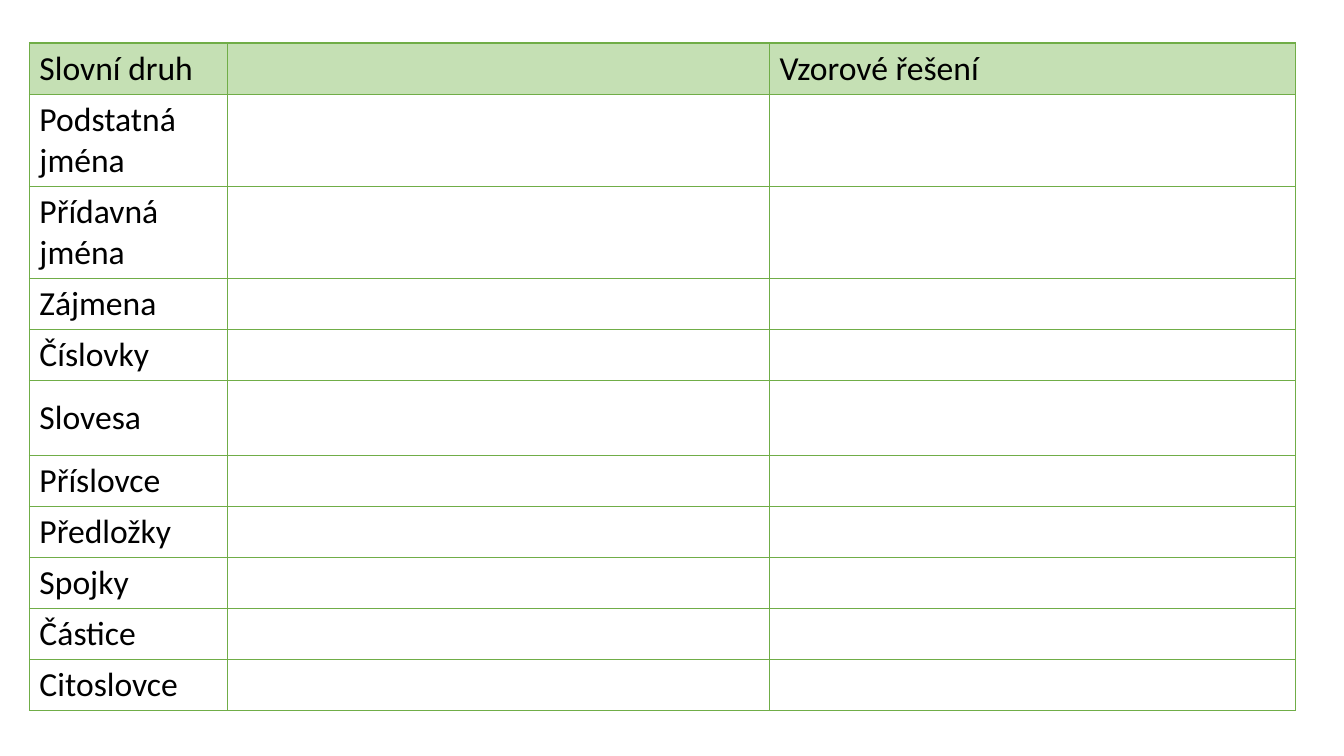
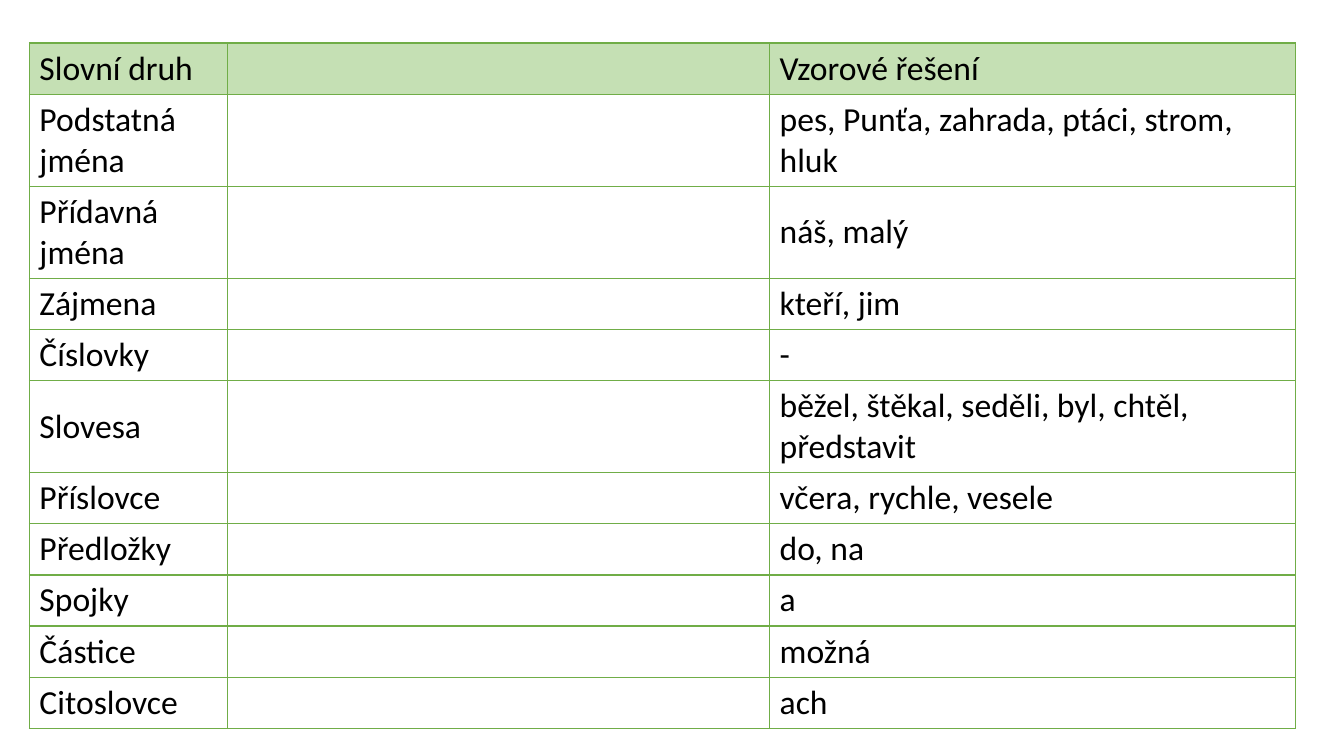
from lxml import etree
from pptx import Presentation
from pptx.dml.color import RGBColor
from pptx.enum.text import MSO_ANCHOR
from pptx.oxml.ns import qn
from pptx.util import Pt

PIXEL = 9525
SLIDE_SIZE = (1280, 720)
TABLE_BOX = (28, 41, 1206, 502)
COLUMN_WIDTHS = (189, 516, 501)
ROW_HEIGHT, TALL_ROW_HEIGHT = 40, 71
TALL_ROWS = ("Podstatná jména", "Slovesa")
BLANK_LAYOUT = 6
MIDDLE = MSO_ANCHOR.MIDDLE
FONT_NAME, FONT_SIZE = "Calibri", Pt(24)
BORDER_WIDTH = Pt(1)
BLACK = RGBColor(0x00, 0x00, 0x00)
BORDER_GREEN = RGBColor(0x70, 0xAD, 0x47)
HEADER_GREEN = RGBColor(0xC5, 0xE0, 0xB4)

HEADER = ("Slovní druh", "", "Vzorové řešení")
SOLUTIONS = {
    "Podstatná jména": "pes, Punťa, zahrada, ptáci, strom, hluk",
    "Přídavná jména": "náš, malý",
    "Zájmena": "kteří, jim",
    "Číslovky": "-",
    "Slovesa": "běžel, štěkal, seděli, byl, chtěl, představit",
    "Příslovce": "včera, rychle, vesele",
    "Předložky": "do, na",
    "Spojky": "a",
    "Částice": "možná",
    "Citoslovce": "ach",
}


def px(length):
    """Turn pixels into EMU."""
    return length * PIXEL


def set_borders(cell):
    """Draw a thin green line on all four sides of a cell."""
    properties = cell._tc.get_or_add_tcPr()
    for index, side in enumerate(("a:lnL", "a:lnR", "a:lnT", "a:lnB")):
        line = etree.Element(qn(side), w=str(BORDER_WIDTH))
        fill = etree.SubElement(line, qn("a:solidFill"))
        etree.SubElement(fill, qn("a:srgbClr"), val=str(BORDER_GREEN))
        properties.insert(index, line)


def format_cell(cell, text, is_header):
    """Fill a cell with text and apply the table's look."""
    cell.vertical_anchor = MIDDLE
    if is_header:
        cell.fill.solid()
        cell.fill.fore_color.rgb = HEADER_GREEN
    else:
        cell.fill.background()
    set_borders(cell)
    if text:
        cell.text_frame.text = text
        font = cell.text_frame.paragraphs[0].runs[0].font
        font.name, font.size, font.color.rgb = FONT_NAME, FONT_SIZE, BLACK


def add_word_class_table(slide, box, show_solutions):
    """Place the word class table, with or without its solutions."""
    rows = [HEADER] + [
        (word_class, "", solution if show_solutions else "")
        for word_class, solution in SOLUTIONS.items()
    ]
    frame = slide.shapes.add_table(len(rows), len(HEADER), *map(px, box))
    table = frame.table
    table.first_row = table.horz_banding = False
    for column, width in zip(table.columns, COLUMN_WIDTHS):
        column.width = px(width)
    for row_index, (row, texts) in enumerate(zip(table.rows, rows)):
        row.height = px(TALL_ROW_HEIGHT if texts[0] in TALL_ROWS else ROW_HEIGHT)
        for cell, text in zip(row.cells, texts):
            format_cell(cell, text, row_index == 0)


def main():
    """Build the exercise slide and the solution slide."""
    presentation = Presentation()
    presentation.slide_width, presentation.slide_height = map(px, SLIDE_SIZE)
    for show_solutions in (False, True):
        slide = presentation.slides.add_slide(presentation.slide_layouts[BLANK_LAYOUT])
        add_word_class_table(slide, TABLE_BOX, show_solutions)
    presentation.save("out.pptx")


if __name__ == "__main__":
    main()
